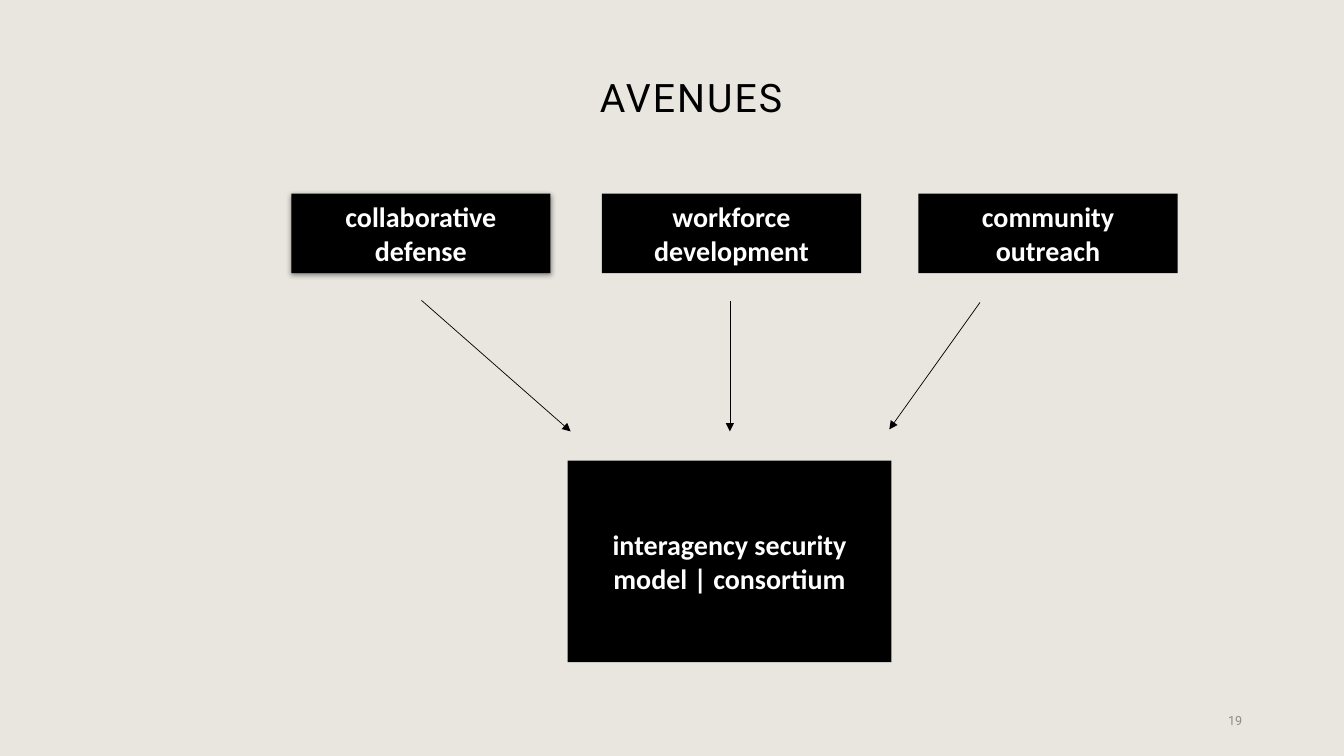
from dataclasses import dataclass

from lxml import etree
from pptx import Presentation
from pptx import util as u
from pptx.dml.color import RGBColor
from pptx.enum import shapes, text
from pptx.oxml.ns import qn

COLORS = {"paper": "E9E6DF", "ink": "000000", "white": "FFFFFF", "grey": "8C8C8C"}
SLIDE_W, SLIDE_H = u.Inches(13.33), u.Inches(7.5)


@dataclass(frozen=True)
class Area:
    """Left, top, width and height in percent of the slide's size."""
    left: float
    top: float
    width: float
    height: float

    def emu(self) -> tuple[int, int, int, int]:
        return (across(self.left), down(self.top),
                across(self.width), down(self.height))


@dataclass(frozen=True)
class Box:
    label: str
    area: Area
    shadow: bool = False


@dataclass(frozen=True)
class Arrow:
    """Start and end points in percent of the slide's size."""
    start: tuple[float, float]
    end: tuple[float, float]


TITLE = Area(16.88, 3.6, 69.09, 19.33)
PAGE_NUMBER = Area(70.67, 92.67, 22.5, 5.33)
AVENUE_TOP, AVENUE_W, AVENUE_H = 25.6, 19.28, 10.53
AVENUES = [
    Box(label, Area(left, AVENUE_TOP, AVENUE_W, AVENUE_H), shadow)
    for label, left, shadow in [
        ("collaborative defense", 21.68, True),
        ("workforce development", 44.79, False),
        ("community outreach", 68.34, False),
    ]
]
CONSORTIUM = Box("interagency security model | consortium",
                 Area(42.24, 60.93, 24.08, 26.67))
ARROWS = [
    Arrow((31.36, 39.73), (42.46, 57.07)),
    Arrow((54.31, 39.87), (54.31, 57.07)),
    Arrow((72.92, 40), (66.17, 56.8)),
]


def across(percent: float) -> int:
    return round(SLIDE_W * percent / 100)


def down(percent: float) -> int:
    return round(SLIDE_H * percent / 100)


def rgb(name: str) -> RGBColor:
    return RGBColor.from_string(COLORS[name])


def write(sp, content: str, *, size: float, font: str, color: str,
          bold: bool = False, align=text.PP_ALIGN.CENTER,
          line_spacing: float = 1.0, tracking: float = 0) -> None:
    tf = sp.text_frame
    tf.word_wrap = True
    tf.auto_size = text.MSO_AUTO_SIZE.NONE
    tf.vertical_anchor = text.MSO_ANCHOR.MIDDLE
    p = tf.paragraphs[0]
    p.alignment = align
    p.line_spacing = line_spacing
    r = p.add_run()
    r.text = content
    r.font.size = u.Pt(size)
    r.font.name = font
    r.font.bold = bold
    r.font.color.rgb = rgb(color)
    if tracking:
        r.font._element.set("spc", str(round(tracking * 100)))


def add_soft_shadow(sp) -> None:
    effects = sp._element.spPr.find(qn("a:effectLst"))
    outer = etree.SubElement(effects, qn("a:outerShdw"), blurRad=str(u.Pt(4)),
                             dist=str(u.Pt(1)), dir=str(90 * 60000),
                             algn="ctr", rotWithShape="0")
    color = etree.SubElement(outer, qn("a:srgbClr"), val=COLORS["ink"])
    etree.SubElement(color, qn("a:alpha"), val="43000")


def add_box(s, box: Box) -> None:
    sp = s.shapes.add_shape(shapes.MSO_SHAPE.RECTANGLE, *box.area.emu())
    sp.fill.solid()
    sp.fill.fore_color.rgb = rgb("ink")
    sp.line.fill.background()
    sp.shadow.inherit = False
    if box.shadow:
        add_soft_shadow(sp)
    write(sp, box.label, size=20, font="Calibri", color="white", bold=True)


def add_arrow(s, arrow: Arrow) -> None:
    (x1, y1), (x2, y2) = arrow.start, arrow.end
    line = s.shapes.add_connector(shapes.MSO_CONNECTOR.STRAIGHT,
                                  across(x1), down(y1), across(x2), down(y2))
    line.line.color.rgb = rgb("ink")
    line.line.width = u.Pt(0.5)
    etree.SubElement(line.line._get_or_add_ln(), qn("a:tailEnd"), type="triangle")
    etree.SubElement(line._element.spPr, qn("a:effectLst"))


def main() -> None:
    prs = Presentation()
    prs.slide_width, prs.slide_height = SLIDE_W, SLIDE_H
    s = prs.slides.add_slide(prs.slide_layouts.get_by_name("Title Only"))
    s.background.fill.solid()
    s.background.fill.fore_color.rgb = rgb("paper")

    title = s.shapes.title
    title.left, title.top, title.width, title.height = TITLE.emu()
    write(title, "AVENUES", size=28, font="Roboto", color="ink",
          line_spacing=0.9, tracking=1.5)
    write(s.shapes.add_textbox(*PAGE_NUMBER.emu()), "19", size=9,
          font="Roboto", color="grey", align=text.PP_ALIGN.RIGHT)

    for box in [*AVENUES, CONSORTIUM]:
        add_box(s, box)
    for arrow in ARROWS:
        add_arrow(s, arrow)
    prs.save("out.pptx")


if __name__ == "__main__":
    main()
